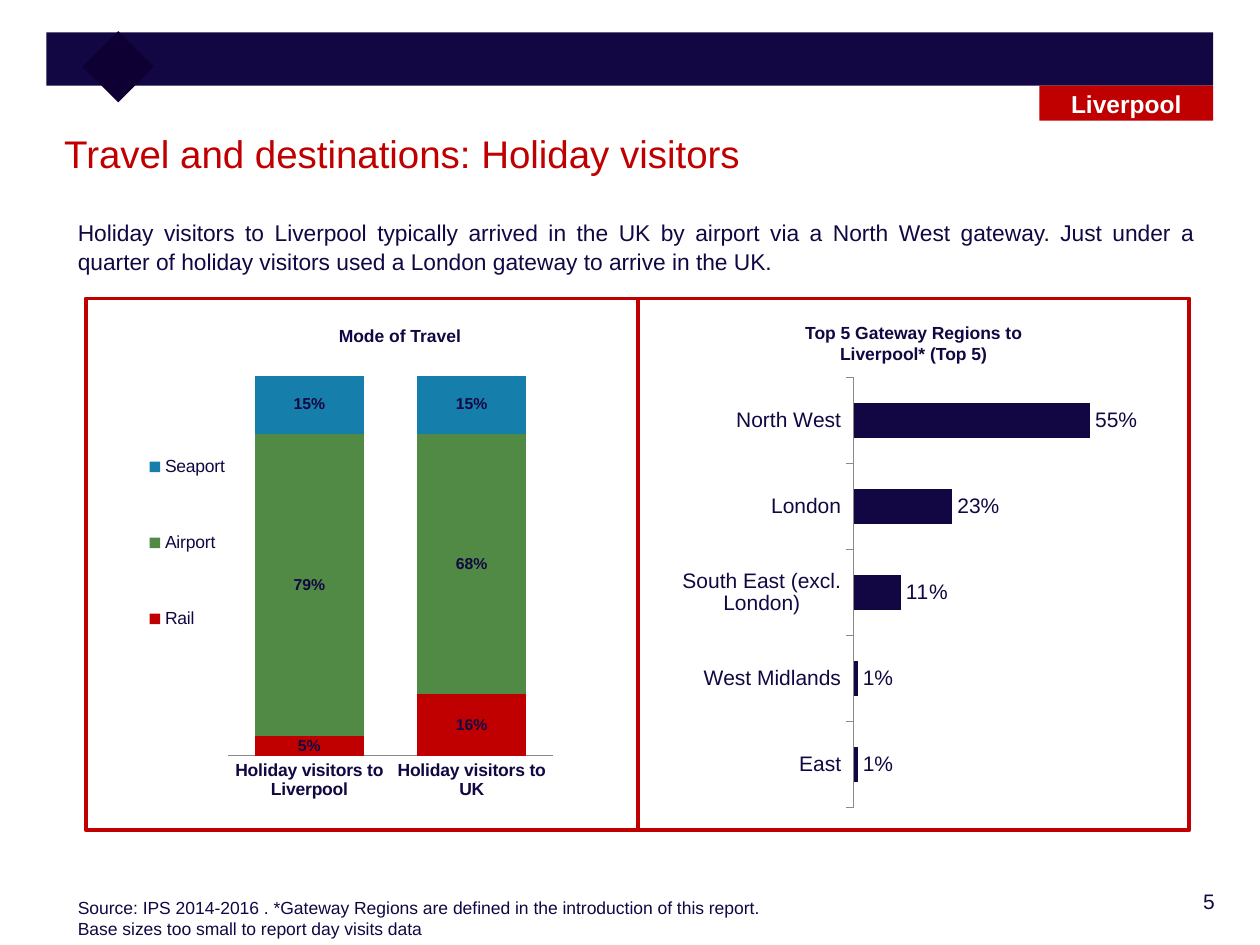
from lxml import etree
from pptx import Presentation
from pptx import util as u
from pptx.chart import data as cd
from pptx.dml import color as dc
from pptx.enum import chart as ce, shapes, text

NAVY, RED, GREEN, BLUE = "120742", "C00000", "518A45", "157EAB"
GREY, WHITE, DARK = "8A8A8A", "FFFFFF", "0E0033"
C = "http://schemas.openxmlformats.org/drawingml/2006/chart"


def tint(part, code):
    """Give a colour format its hex colour."""
    part.rgb = dc.RGBColor.from_string(code)


def put(obj, vals):
    """Set each attribute named in a dict."""
    for key, val in vals.items():
        setattr(obj, key, val)


def ink(font, size, code=NAVY, bold=False):
    """Format a font."""
    put(font, {"name": "Arial", "size": u.Pt(size), "bold": bold})
    tint(font.color, code)


def spot(box):
    """Turn left, top, width, height in points into lengths."""
    return [u.Pt(n) for n in box]


def fill(frame, words, size, code=NAVY, bold=False, **vals):
    """Write words into a frame and format each paragraph."""
    frame.text = words
    frame.word_wrap = True
    for para in frame.paragraphs:
        put(para, vals)
        ink(para.font, size, code, bold)


def note(slide, box, words, size, **vals):
    """Add a text box."""
    frame = slide.shapes.add_textbox(*spot(box)).text_frame
    fill(frame, words, size, **vals)


def block(slide, box, code=None, edge=None, turn=0):
    """Add a rectangle with a fill or an edge."""
    rect = slide.shapes.add_shape(shapes.MSO_SHAPE.RECTANGLE, *spot(box))
    rect.shadow.inherit = False
    rect.rotation = turn
    if code:
        rect.fill.solid()
        tint(rect.fill.fore_color, code)
    else:
        rect.fill.background()
    if edge:
        rect.line.width = u.Pt(2.25)
        tint(rect.line.color, edge)
    else:
        rect.line.fill.background()
    return rect


def place(chart, name, index, box):
    """Fix the layout of a chart part as shares of the chart."""
    host = chart.element.xpath(f"c:chart/{name}")[0]
    for old in host.xpath("c:layout"):
        host.remove(old)
    lay = etree.Element(f"{{{C}}}layout")
    man = etree.SubElement(lay, f"{{{C}}}manualLayout")
    tags = {"layoutTarget": "inner"} if name == "c:plotArea" else {}
    tags.update(xMode="edge", yMode="edge", **dict(zip("xywh", box)))
    for tag, val in tags.items():
        etree.SubElement(man, f"{{{C}}}{tag}").set("val", str(val))
    host.insert(index, lay)


def graph(slide, box, kind, cats, rows, area, gap, top, sizes, bold, spot_at, tick):
    """Add a bar or column chart with value labels and no value axis."""
    data = cd.CategoryChartData(number_format="0%")
    data.categories = cats
    for name, vals, _ in rows:
        data.add_series(name, vals)
    chart = slide.shapes.add_chart(kind, *spot(box), data).chart
    put(chart, {"has_title": False, "has_legend": False})
    ink(chart.font, sizes[0])
    plot = chart.plots[0]
    put(plot, {"gap_width": gap, "vary_by_categories": False, "has_data_labels": True})
    for item, row in zip(plot.series, rows):
        item.format.fill.solid()
        tint(item.format.fill.fore_color, row[2])
    tags = plot.data_labels
    put(tags, {"show_value": True, "number_format": "0%",
               "number_format_is_linked": False, "position": spot_at})
    ink(tags.font, sizes[1], bold=bold)
    put(chart.value_axis, {"visible": False, "has_major_gridlines": False,
                           "minimum_scale": 0, "maximum_scale": top})
    axis = chart.category_axis
    put(axis, {"major_tick_mark": tick, "has_major_gridlines": False})
    ink(axis.tick_labels.font, sizes[0], bold=bold)
    axis.format.line.width = u.Pt(0.75)
    tint(axis.format.line.color, GREY)
    place(chart, "c:plotArea", 0, area)
    return chart


def modes(slide):
    """Add the stacked chart of travel modes."""
    chart = graph(
        slide, (69.8, 200.2, 257, 262), ce.XL_CHART_TYPE.COLUMN_STACKED_100,
        ["Holiday visitors to Liverpool", "Holiday visitors to UK"],
        [("Rail", (0.05, 0.16), RED), ("Airport", (0.79, 0.68), GREEN),
         ("Seaport", (0.15, 0.15), BLUE)],
        (0.236, 0.056, 0.722, 0.828), 49, 1, (10, 9), True,
        ce.XL_LABEL_POSITION.CENTER, ce.XL_TICK_MARK.NONE)
    chart.plots[0].overlap = 100
    chart.has_legend = True
    put(chart.legend, {"position": ce.XL_LEGEND_POSITION.LEFT,
                       "include_in_layout": False})
    ink(chart.legend.font, 10)
    place(chart, "c:legend", 1, (0.05, 0.11, 0.19, 0.62))


def gates(slide):
    """Add the bar chart of gateway regions."""
    chart = graph(
        slide, (369.4, 204.5, 294.5, 268.6), ce.XL_CHART_TYPE.BAR_CLUSTERED,
        ["North West", "London", "South East (excl. London)", "West Midlands", "East"],
        [("Series 1", (0.55, 0.23, 0.11, 0.01, 0.01), NAVY)],
        (0.402, 0.042, 0.501, 0.915), 150, 0.6, (12, 12), False,
        ce.XL_LABEL_POSITION.OUTSIDE_END, ce.XL_TICK_MARK.OUTSIDE)
    chart.category_axis.reverse_order = True


def head(slide):
    """Add the band, the title and the city tag."""
    block(slide, (26.5, 18.5, 666.7, 30.5), NAVY)
    block(slide, (53.2, 23.8, 28.8, 28.8), DARK, turn=45)
    title = slide.shapes.title
    put(title, dict(zip(("left", "top", "width", "height"),
                        spot((29.5, 68.4, 663, 44)))))
    put(title.text_frame, {"vertical_anchor": text.MSO_ANCHOR.TOP,
                           "margin_top": u.Pt(6)})
    fill(title.text_frame, "Travel and destinations: Holiday visitors", 22, RED,
         alignment=text.PP_ALIGN.LEFT)
    tag = block(slide, (594, 49, 99.2, 20), RED).text_frame
    tag.vertical_anchor = text.MSO_ANCHOR.MIDDLE
    fill(tag, "Liverpool", 14, WHITE, True, alignment=text.PP_ALIGN.CENTER)


def main():
    """Build and save the slide."""
    deck = Presentation()
    put(deck, {"slide_width": u.Pt(720), "slide_height": u.Pt(540)})
    slide = deck.slides.add_slide(deck.slide_layouts[5])
    head(slide)
    note(slide, (37.4, 120.2, 651.6, 53.3),
         "Holiday visitors to Liverpool typically arrived in the UK by airport via "
         "a North West gateway. Just under a quarter of holiday visitors used a "
         "London gateway to arrive in the UK.", 13,
         alignment=text.PP_ALIGN.JUSTIFY, line_spacing=1.07)
    for col in range(2):
        block(slide, (49 + 315.3 * col, 170.6, 315.3, 303.8), edge=RED)
    note(slide, (186.5, 182.2, 106, 22.3), "Mode of Travel", 10, bold=True)
    note(slide, (445.7, 180.7, 152.6, 33),
         "Top 5 Gateway Regions to Liverpool* (Top 5)", 10, bold=True,
         alignment=text.PP_ALIGN.CENTER)
    modes(slide)
    gates(slide)
    note(slide, (37.4, 509, 653.8, 31),
         "Source: IPS 2014-2016 . *Gateway Regions are defined in the introduction "
         "of this report.\nBase sizes too small to report day visits data", 10)
    note(slide, (614.2, 504, 87, 26), "5", 12, alignment=text.PP_ALIGN.RIGHT)
    deck.save("out.pptx")


if __name__ == "__main__":
    main()
